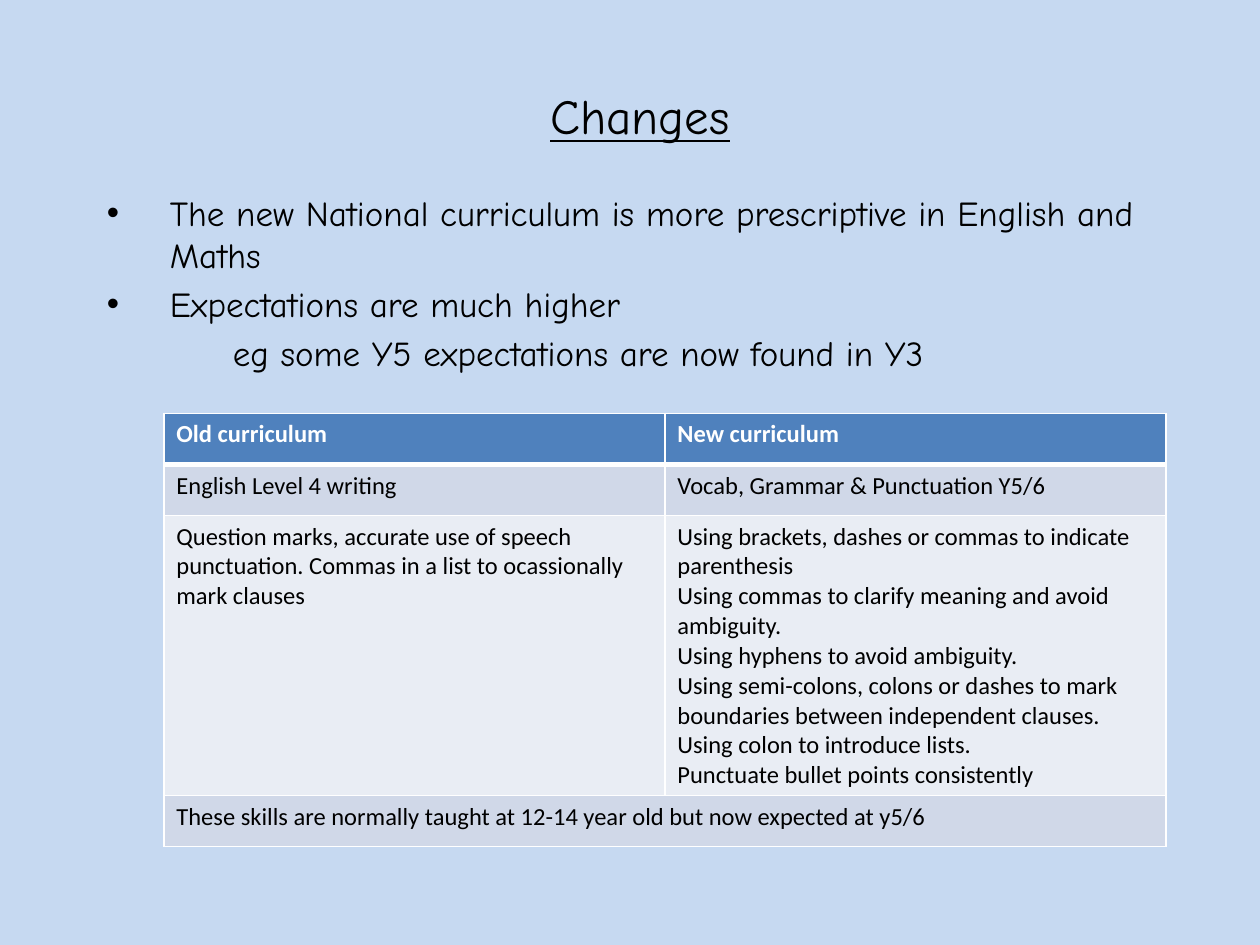
from pptx import Presentation, util as u
from pptx.dml.color import RGBColor
from pptx.enum import text
from pptx.oxml import parse_xml
from pptx.oxml.ns import nsdecls

Pt = u.Pt

# Content
TITLE = "Changes"
# (text, left indent, first-line indent, bullet)
POINTS = [
    ("The new National curriculum is more prescriptive in English and Maths", 36, -36, True),
    ("Expectations are much higher", 36, -36, True),
    ("eg some Y5 expectations are now found in Y3", 72, 0, False),
]
# Each cell is a list of paragraphs
ROWS = [
    [["Old curriculum"], ["New curriculum"]],
    [["English Level 4 writing"], ["Vocab, Grammar & Punctuation Y5/6"]],
    [
        ["Question marks, accurate use of speech punctuation. "
         "Commas in a list to ocassionally mark clauses"],
        ["Using brackets, dashes or commas to indicate parenthesis",
         "Using commas to clarify meaning and avoid ambiguity.",
         "Using hyphens to avoid ambiguity.",
         "Using semi-colons, colons or dashes to mark boundaries between independent clauses.",
         "Using colon to introduce lists.",
         "Punctuate bullet points consistently"],
    ],
    [["These skills are normally taught at 12-14 year old but now expected at y5/6"]],
]

THEME = {
    "bg": "C6D9F1", "ink": "000000", "white": "FFFFFF",
    "head": "4F81BD", "bands": ["E9EDF4", "D0D8E8"],
    "display": "Comic Neue", "body": "Calibri",
    "title": 28, "points": 20, "table": 14,
}
TITLE_BOX = (65.5, 43.2, 600.5, 45.4)
POINTS_BOX = (54, 105.8, 612, 344)
TABLE_BOX = (93.6, 236.2, 572.6, 247.6)
ROW_H, TALL_ROW, TALL_H = 29.2, 2, 160


def rgb(name):
    return RGBColor.from_string(name)


def write(p, words, size, font, color=THEME["ink"], bold=False, underline=False):
    r = p.add_run()
    r.text = words
    f = r.font
    f.size, f.name, f.bold, f.underline = Pt(size), font, bold, underline
    f.color.rgb = rgb(color)


def paragraphs(tf, items):
    for i, item in enumerate(items):
        yield (tf.add_paragraph() if i else tf.paragraphs[0]), item


def text_box(s, box, anchor):
    tf = s.shapes.add_textbox(*map(Pt, box)).text_frame
    tf.word_wrap = True
    tf.vertical_anchor = anchor
    return tf


def indent(p, left, first, bullet):
    pPr = p._p.get_or_add_pPr()
    pPr.set("marL", str(Pt(left)))
    pPr.set("indent", str(Pt(first)))
    if bullet:
        pPr.append(parse_xml(f'<a:buFont {nsdecls("a")} typeface="Arial"/>'))
        pPr.append(parse_xml(f'<a:buChar {nsdecls("a")} char="•"/>'))


def borders(cell, widths):
    tcPr = cell._tc.get_or_add_tcPr()
    for side, width in widths.items():
        tcPr.append(parse_xml(
            f'<a:ln{side} {nsdecls("a")} w="{Pt(width)}"><a:solidFill>'
            f'<a:srgbClr val="{THEME["white"]}"/></a:solidFill></a:ln{side}>'))


prs = Presentation()
prs.slide_width, prs.slide_height = Pt(720), Pt(540)
s = prs.slides.add_slide(prs.slide_layouts[6])
s.background.fill.solid()
s.background.fill.fore_color.rgb = rgb(THEME["bg"])

# Title
p = text_box(s, TITLE_BOX, text.MSO_ANCHOR.MIDDLE).paragraphs[0]
p.alignment = text.PP_ALIGN.CENTER
write(p, TITLE, THEME["title"], THEME["display"], underline=True)

# Bullet points
tf = text_box(s, POINTS_BOX, text.MSO_ANCHOR.TOP)
for p, (words, left, first, bullet) in paragraphs(tf, POINTS):
    if p is not tf.paragraphs[0] and words != POINTS[0][0]:
        p.space_before = Pt(4)
    indent(p, left, first, bullet)
    write(p, words, THEME["points"], THEME["display"])

# Curriculum table
table = s.shapes.add_table(len(ROWS), 2, *map(Pt, TABLE_BOX)).table
for col in table.columns:
    col.width = Pt(TABLE_BOX[2] / 2)
for i, row in enumerate(ROWS):
    header = i == 0
    table.rows[i].height = Pt(TALL_H if i == TALL_ROW else ROW_H)
    if len(row) == 1:
        table.cell(i, 0).merge(table.cell(i, 1))
    for j in range(2):
        cell = table.cell(i, j)
        borders(cell, {"L": 1, "R": 1, "T": 3 if i == 1 else 1, "B": 3 if header else 1})
        cell.fill.solid()
        cell.fill.fore_color.rgb = rgb(THEME["head"] if header else THEME["bands"][i % 2])
        for p, words in paragraphs(cell.text_frame, row[j] if j < len(row) else []):
            write(p, words, THEME["table"], THEME["body"],
                  THEME["white"] if header else THEME["ink"], bold=header)

prs.save("out.pptx")
